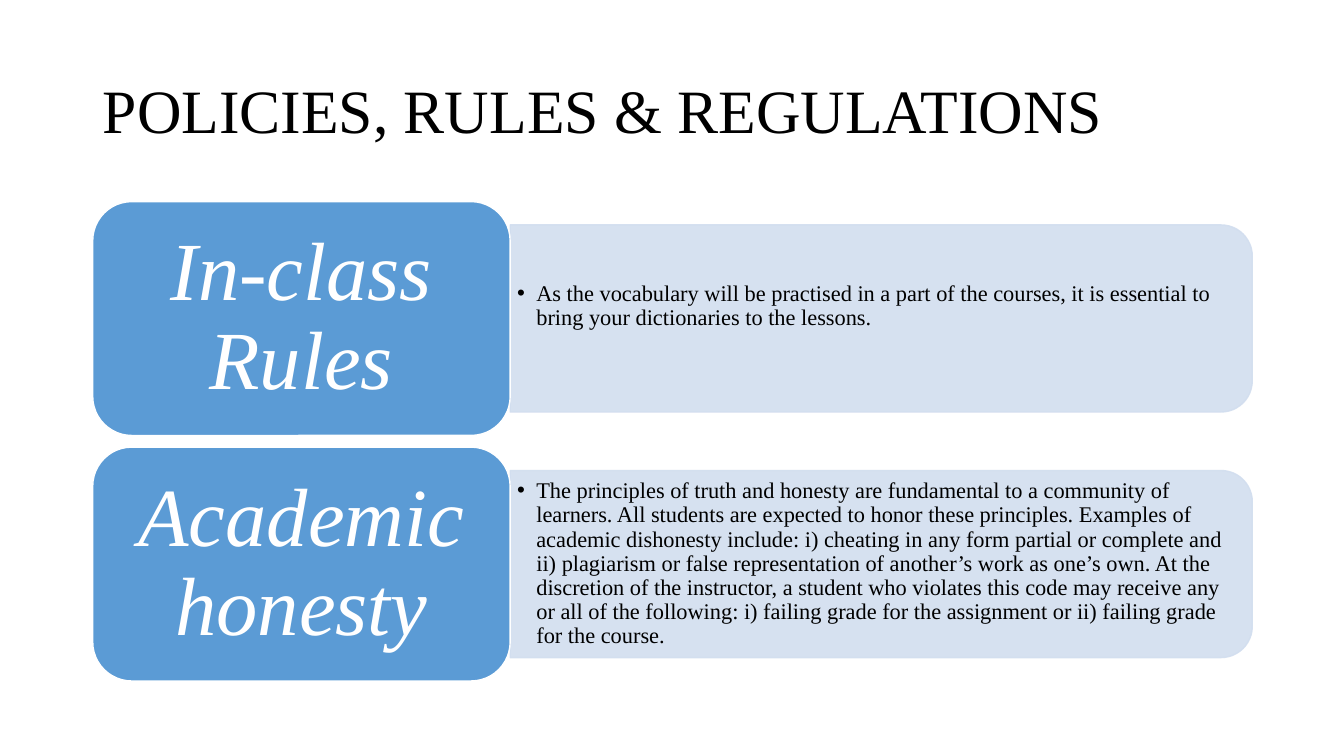
"""Build the slide on course policies, rules and regulations."""
from lxml import etree
from pptx import Presentation
from pptx.dml.color import RGBColor
from pptx.enum.shapes import MSO_SHAPE
from pptx.enum.text import MSO_ANCHOR, MSO_AUTO_SIZE, PP_ALIGN
from pptx.oxml.ns import qn
from pptx.util import Inches, Pt

ROUNDED = MSO_SHAPE.ROUNDED_RECTANGLE
ROUND_TOP = MSO_SHAPE.ROUND_2_SAME_RECTANGLE
LEFT, CENTER = PP_ALIGN.LEFT, PP_ALIGN.CENTER
MIDDLE = MSO_ANCHOR.MIDDLE

TITLE = "POLICIES, RULES & REGULATIONS"
POLICIES = [
    {
        "label": "In-class Rules",
        "detail": "As the vocabulary will be practised in a part of the courses, it is "
                  "essential to bring your dictionaries to the lessons.",
        "space_below": 0.27,
    },
    {
        "label": "Academic honesty",
        "detail": "The principles of truth and honesty are fundamental to a community of "
                  "learners. All students are expected to honor these principles. Examples "
                  "of academic dishonesty include: i) cheating in any form partial or "
                  "complete and ii) plagiarism or false representation of another’s work as "
                  "one’s own. At the discretion of the instructor, a student who violates "
                  "this code may receive any or all of the following: i) failing grade for "
                  "the assignment or ii) failing grade for the course.",
        "space_below": 0.03,
    },
]
COLORS = {"text": "000000", "label": "5B9BD5", "panel": "D2DEEF", "white": "FFFFFF"}
FONT = "Times New Roman"

SLIDE_WIDTH, SLIDE_HEIGHT = 13.33, 7.5
MARGIN = 0.92
CONTENT_WIDTH = 11.5
LABEL_WIDTH = CONTENT_WIDTH * 0.36
PANEL_WIDTH = CONTENT_WIDTH - LABEL_WIDTH
ROWS_TOP = 2
ROW_HEIGHT = 2.32
ROW_PITCH = ROW_HEIGHT * 1.05
PANEL_HEIGHT = ROW_HEIGHT * 0.8
TEXT_INSET = 0.09
BULLET_INDENT = 0.19


def color(name):
    return RGBColor.from_string(COLORS[name])


def paint(shape, fill, line):
    shape.shadow.inherit = False
    shape.fill.solid()
    shape.fill.fore_color.rgb = color(fill)
    shape.line.color.rgb = color(line)
    shape.line.width = Pt(1)


def write(shape, text, size, font_color, align, insets, italic=False):
    frame = shape.text_frame
    frame.text = text
    frame.word_wrap = True
    frame.auto_size = MSO_AUTO_SIZE.NONE
    frame.vertical_anchor = MIDDLE
    frame.margin_left, frame.margin_top, frame.margin_right, frame.margin_bottom = map(Inches, insets)
    paragraph = frame.paragraphs[0]
    paragraph.alignment = align
    paragraph.line_spacing = 0.9
    font = paragraph.runs[0].font
    font.name, font.size, font.italic = FONT, Pt(size), italic
    font.color.rgb = color(font_color)
    return paragraph


def add_panel(slide, center_y):
    center_x = MARGIN + LABEL_WIDTH + PANEL_WIDTH / 2
    panel = slide.shapes.add_shape(
        ROUND_TOP, Inches(center_x - PANEL_HEIGHT / 2), Inches(center_y - PANEL_WIDTH / 2),
        Inches(PANEL_HEIGHT), Inches(PANEL_WIDTH))
    panel.rotation = 90
    paint(panel, "panel", "panel")
    for fill_color in panel._element.spPr.iter(qn("a:srgbClr")):
        etree.SubElement(fill_color, qn("a:alpha"), val="90000")


def add_detail(slide, center_y, text, space_below):
    height = PANEL_HEIGHT - 2 * TEXT_INSET
    box = slide.shapes.add_textbox(
        Inches(MARGIN + LABEL_WIDTH), Inches(center_y - height / 2),
        Inches(PANEL_WIDTH - TEXT_INSET), Inches(height))
    paragraph = write(box, text, 16, "text", LEFT, (0.07, 0.03, 0.07, space_below))
    properties = paragraph._p.get_or_add_pPr()
    properties.set("marL", str(Inches(BULLET_INDENT)))
    properties.set("indent", str(-Inches(BULLET_INDENT)))
    etree.SubElement(properties, qn("a:buFont"), typeface="Arial")
    etree.SubElement(properties, qn("a:buChar"), char="•")


def add_label(slide, top, text):
    label = slide.shapes.add_shape(
        ROUNDED, Inches(MARGIN), Inches(top), Inches(LABEL_WIDTH), Inches(ROW_HEIGHT))
    paint(label, "label", "white")
    write(label, text, 59, "white", CENTER, (0.25, 0.12, 0.25, 0.12), italic=True)


def main():
    presentation = Presentation()
    presentation.slide_width = Inches(SLIDE_WIDTH)
    presentation.slide_height = Inches(SLIDE_HEIGHT)
    slide = presentation.slides.add_slide(presentation.slide_layouts[5])

    title = slide.shapes.title
    title.left, title.top = Inches(MARGIN), Inches(0.4)
    title.width, title.height = Inches(CONTENT_WIDTH), Inches(1.45)
    write(title, TITLE, 44, "text", LEFT, (0.1, 0.05, 0.1, 0.05))

    for row, policy in enumerate(POLICIES):
        top = ROWS_TOP + row * ROW_PITCH
        center_y = top + ROW_HEIGHT / 2
        add_panel(slide, center_y)
        add_detail(slide, center_y, policy["detail"], policy["space_below"])
        add_label(slide, top, policy["label"])

    presentation.save("out.pptx")


if __name__ == "__main__":
    main()
